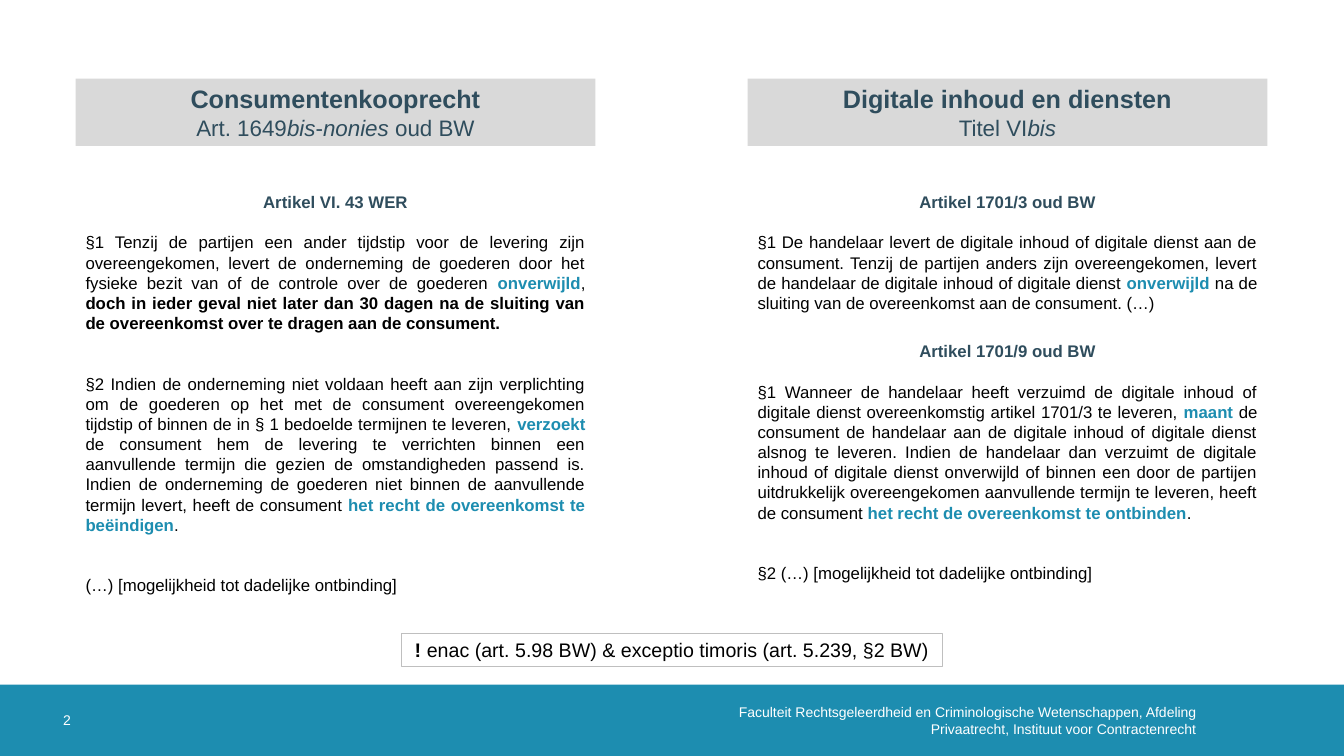
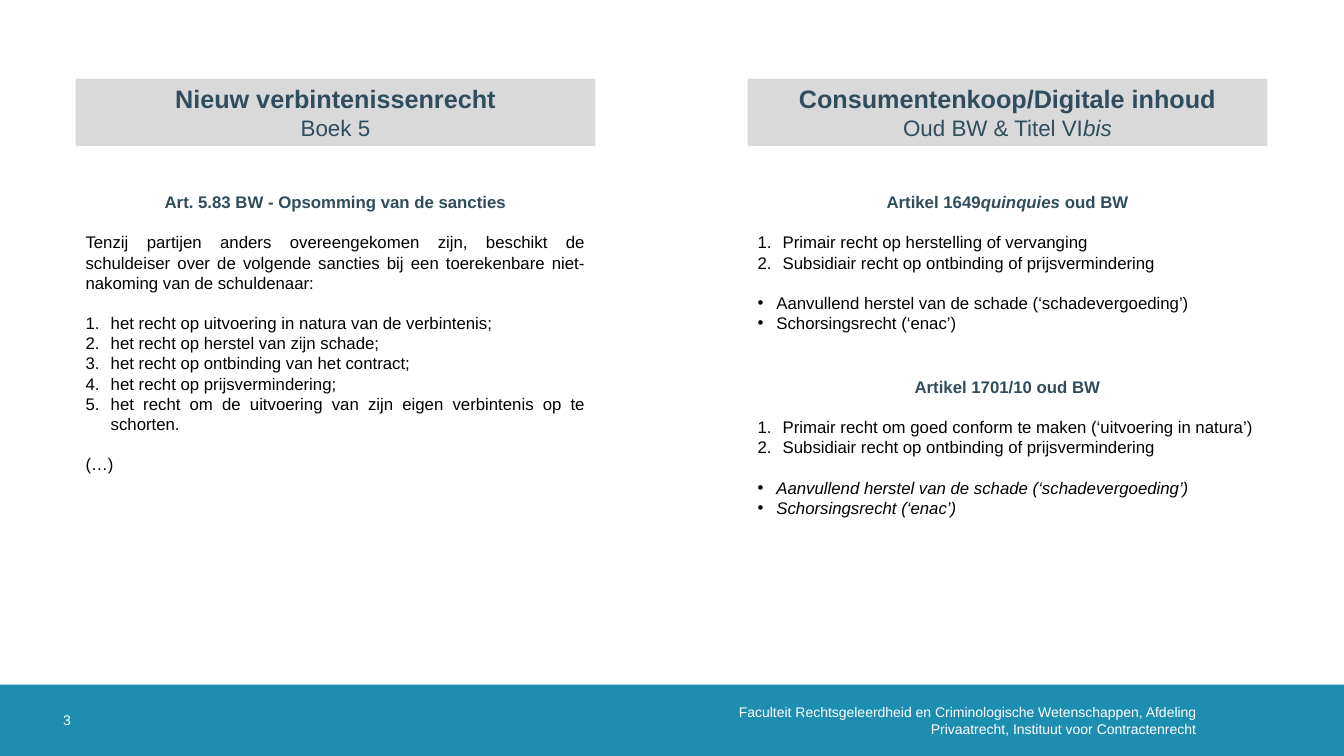
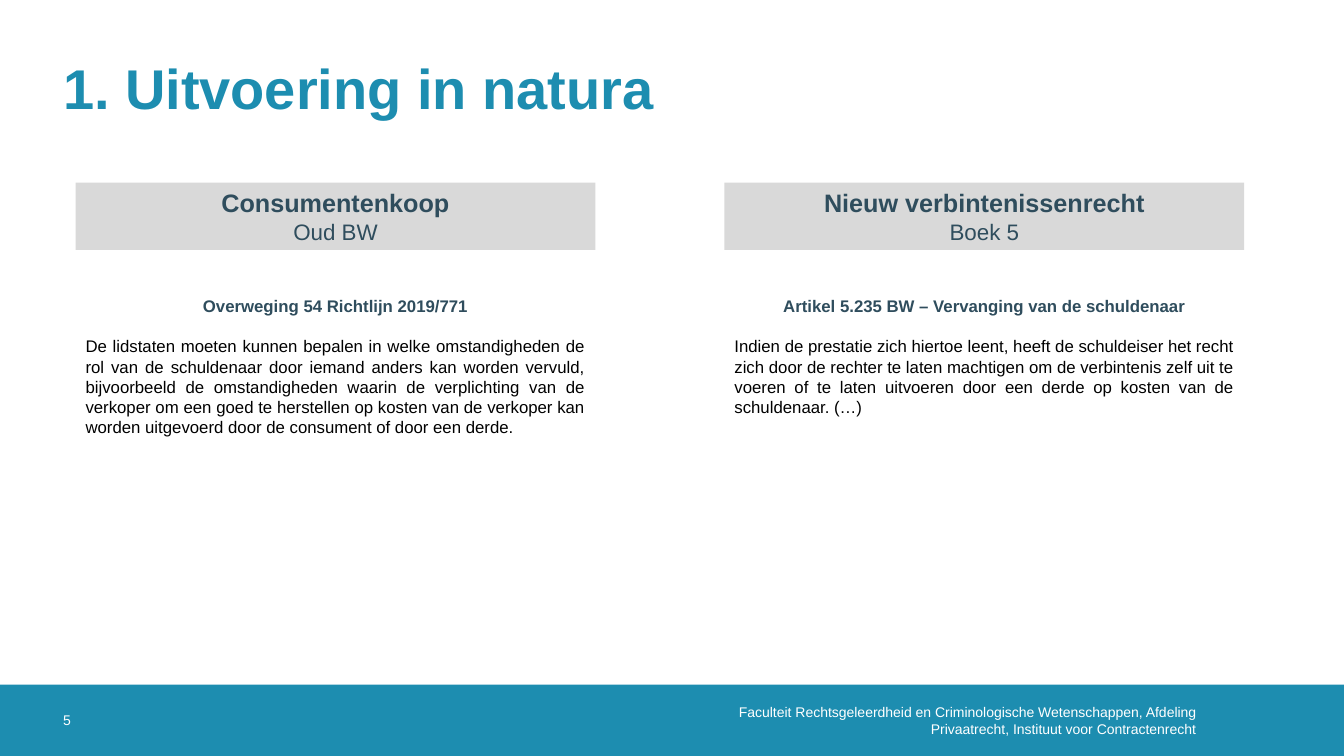
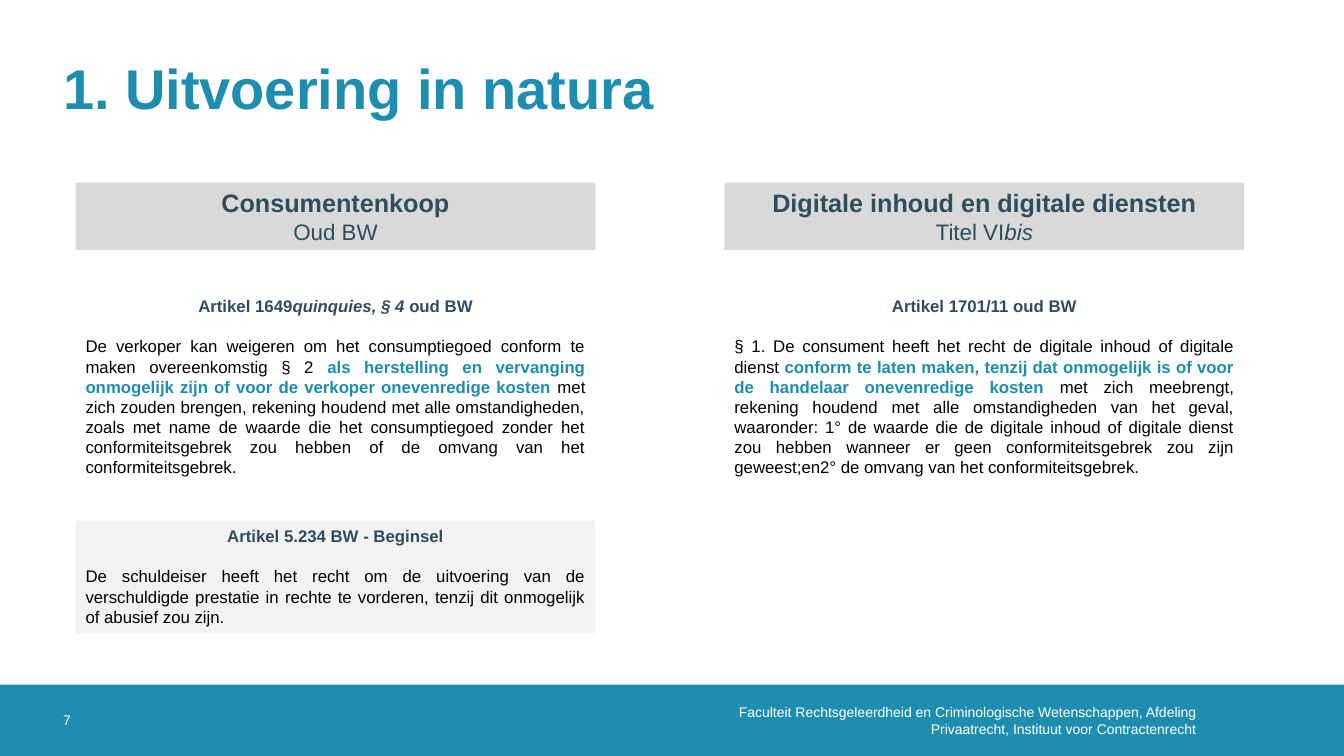
from dataclasses import dataclass

from lxml.etree import SubElement
from pptx import Presentation
from pptx.dml.color import RGBColor
from pptx.enum.shapes import MSO_SHAPE
from pptx.enum.text import MSO_ANCHOR, MSO_AUTO_SIZE, PP_ALIGN
from pptx.oxml.ns import qn
from pptx.util import Emu, Pt

EMU_PER_PX = 9525
SLIDE_WIDTH, SLIDE_HEIGHT = 1280, 720
FONT = "Arial"
TEAL, NAVY, BLACK, WHITE = "1D8DB0", "2F4D5D", "000000", "FFFFFF"
HEADER_GREY, PANEL_GREY, BORDER_GREY = "D9D9D9", "F2F2F2", "BFBFBF"
BAND_TOP, BAND_HEIGHT = 652, 68
COLUMN_WIDTH, HEADER_HEIGHT, BODY_OFFSET = 495, 64, 103
LEFT_COLUMN, RIGHT_COLUMN, TITLED_RIGHT_COLUMN = 72, 712, 690
HIGH_TOP, TITLED_TOP = 75, 174
BLANK_LINE = 14.4
FOOTER = (
    "Faculteit Rechtsgeleerdheid en Criminologische Wetenschappen, Afdeling "
    "Privaatrecht, Instituut voor Contractenrecht"
)


@dataclass
class Line:
    """One paragraph: its runs, style, bullet and blank lines before it."""

    runs: tuple
    size: int = 12
    color: str = BLACK
    bold: bool = False
    italic: bool = False
    align: PP_ALIGN = PP_ALIGN.JUSTIFY
    gap: int = 0
    bullet: str = ""


def px(length):
    """Turn px into EMU."""
    return Emu(length * EMU_PER_PX)


def rgb(value):
    """Turn a hex string into a colour."""
    return RGBColor.from_string(value)


def accent(text):
    """Return a bold teal run."""
    return text, {"bold": True, "color": TEAL}


def strong(text):
    """Return a bold run."""
    return text, {"bold": True}


def slanted(text):
    """Return an italic run."""
    return text, {"italic": True}


def heading(*runs):
    """Return the centred heading of an article."""
    return Line(runs, color=NAVY, bold=True, align=PP_ALIGN.CENTER)


def prose(*runs, gap=1):
    """Return a justified paragraph of law text."""
    return Line(runs, gap=gap)


def listing(bullet, *items, italic=False):
    """Return list items, the first one after a blank line."""
    return [
        Line((item,), bullet=bullet, italic=italic, gap=int(index == 0))
        for index, item in enumerate(items)
    ]


def add_bullet(paragraph, bullet):
    """Give a paragraph a hanging number or dot."""
    properties = paragraph._p.get_or_add_pPr()
    indent = px(24 if bullet == "1." else 18)
    properties.set("marL", str(indent))
    properties.set("indent", str(-indent))
    if bullet == "1.":
        SubElement(properties, qn("a:buAutoNum"), type="arabicPeriod")
    else:
        SubElement(properties, qn("a:buFont"), typeface=FONT)
        SubElement(properties, qn("a:buChar"), char=bullet)


def write_line(paragraph, line):
    """Fill one paragraph from a line."""
    if line.bullet:
        add_bullet(paragraph, line.bullet)
    paragraph.alignment = line.align
    if line.gap:
        paragraph.space_before = Pt(line.gap * BLANK_LINE)
    font = paragraph.font
    font.name, font.size = FONT, Pt(line.size)
    font.bold, font.italic = line.bold, line.italic
    font.color.rgb = rgb(line.color)
    for item in line.runs:
        text, changes = (item, {}) if isinstance(item, str) else item
        run = paragraph.add_run()
        run.text = text
        if "bold" in changes:
            run.font.bold = True
        if "italic" in changes:
            run.font.italic = True
        if "color" in changes:
            run.font.color.rgb = rgb(changes["color"])


def add_text(slide, box, lines, fill=None, border=None, wrap=True):
    """Add a text box that grows with its lines."""
    shape = slide.shapes.add_textbox(*map(px, box))
    frame = shape.text_frame
    frame.word_wrap = wrap
    frame.auto_size = MSO_AUTO_SIZE.SHAPE_TO_FIT_TEXT
    if fill:
        shape.fill.solid()
        shape.fill.fore_color.rgb = rgb(fill)
    if border:
        shape.line.color.rgb = rgb(border)
        shape.line.width = Pt(0.75)
    for index, line in enumerate(lines):
        write_line(frame.add_paragraph() if index else frame.paragraphs[0], line)
    return shape


def add_fixed_text(slide, box, line, right_inset=0):
    """Add a vertically centred text box of fixed size."""
    frame = add_text(slide, box, [line]).text_frame
    frame.auto_size = MSO_AUTO_SIZE.NONE
    frame.vertical_anchor = MSO_ANCHOR.MIDDLE
    frame.margin_left = frame.margin_top = frame.margin_bottom = 0
    frame.margin_right = px(right_inset)


def add_footer(slide, number):
    """Add the band with the slide number and the faculty."""
    band = slide.shapes.add_shape(
        MSO_SHAPE.RECTANGLE, 0, px(BAND_TOP), px(SLIDE_WIDTH), px(BAND_HEIGHT)
    )
    band.shadow.inherit = False
    band.fill.solid()
    band.fill.fore_color.rgb = rgb(TEAL)
    band.line.fill.background()
    for left, width, text, align, inset in (
        (634, 524, FOOTER, PP_ALIGN.RIGHT, 19),
        (60, 68, str(number), PP_ALIGN.LEFT, 0),
    ):
        line = Line((text,), size=10, color=WHITE, align=align)
        add_fixed_text(slide, (left, BAND_TOP, width, BAND_HEIGHT), line, inset)


def add_slide(presentation, number, title=None):
    """Add a slide with its footer and optional title."""
    slide = presentation.slides.add_slide(presentation.slide_layouts[6])
    add_footer(slide, number)
    if title:
        line = Line((title,), size=40, color=TEAL, bold=True, align=PP_ALIGN.LEFT)
        add_fixed_text(slide, (60, 22, 1159, 121), line)
    return slide


def add_column(slide, left, top, title, subtitle, height, lines):
    """Add a grey header with an article below it."""
    centred = {"color": NAVY, "align": PP_ALIGN.CENTER}
    header = [
        Line((title,), size=18, bold=True, **centred),
        Line(subtitle, size=16, **centred),
    ]
    add_text(slide, (left, top, COLUMN_WIDTH, HEADER_HEIGHT), header, HEADER_GREY)
    add_text(slide, (left, top + BODY_OFFSET, COLUMN_WIDTH, height), lines)


def build_delivery(presentation):
    """Build the comparison of delivery rules."""
    slide = add_slide(presentation, 2)
    add_column(
        slide, LEFT_COLUMN, HIGH_TOP, "Consumentenkooprecht",
        ("Art. 1649", slanted("bis"), "-", slanted("nonies "), "oud BW"), 397,
        [
            heading("Artikel VI. 43 WER"),
            prose(
                "§1 Tenzij de partijen een ander tijdstip voor de levering zijn "
                "overeengekomen, levert de onderneming de goederen door het fysieke "
                "bezit van of de controle over de goederen ",
                accent("onverwijld"), ", ",
                strong("doch in ieder geval niet later dan 30 dagen na de sluiting van "
                       "de overeenkomst over te dragen aan de consument."),
            ),
            prose(
                "§2 Indien de onderneming niet voldaan heeft aan zijn verplichting om de "
                "goederen op het met de consument overeengekomen tijdstip of binnen de "
                "in § 1 bedoelde termijnen te leveren, ",
                accent("verzoekt "),
                "de consument hem de levering te verrichten binnen een aanvullende "
                "termijn die gezien de omstandigheden passend is. Indien de onderneming "
                "de goederen niet binnen de aanvullende termijn levert, heeft de "
                "consument ",
                accent("het recht de overeenkomst te beëindigen"), ".", gap=2,
            ),
            prose("(…) [mogelijkheid tot dadelijke ontbinding]", gap=2),
        ],
    )
    add_column(
        slide, RIGHT_COLUMN, HIGH_TOP, "Digitale inhoud en diensten",
        ("Titel VI", slanted("bis")), 126,
        [
            heading("Artikel 1701/3 oud BW"),
            prose(
                "§1 De handelaar levert de digitale inhoud of digitale dienst aan de "
                "consument. Tenzij de partijen anders zijn overeengekomen, levert de "
                "handelaar de digitale inhoud of digitale dienst ",
                accent("onverwijld"),
                " na de sluiting van de overeenkomst aan de consument. (…)",
            ),
        ],
    )
    add_text(
        slide, (RIGHT_COLUMN, 320, COLUMN_WIDTH, 242),
        [
            heading("Artikel 1701/9 oud BW"),
            prose(
                "§1 Wanneer de handelaar heeft verzuimd de digitale inhoud of digitale "
                "dienst overeenkomstig artikel 1701/3 te leveren, ",
                accent("maant "),
                "de consument de handelaar aan de digitale inhoud of digitale dienst "
                "alsnog te leveren. Indien de handelaar dan verzuimt de digitale inhoud "
                "of digitale dienst onverwijld of binnen een door de partijen "
                "uitdrukkelijk overeengekomen aanvullende termijn te leveren, heeft de "
                "consument ",
                accent("het recht de overeenkomst te ontbinden"), ".",
            ),
            prose("§2 (…) [mogelijkheid tot dadelijke ontbinding]", gap=2),
        ],
    )
    note = Line(
        (strong("! "), "enac (art. 5.98 BW) & exceptio timoris (art. 5.239, §2 BW)"),
        size=14, align=PP_ALIGN.CENTER,
    )
    add_text(slide, (382, 603, 516, 32), [note], border=BORDER_GREY, wrap=False)


def build_sanctions(presentation):
    """Build the comparison of sanctions."""
    slide = add_slide(presentation, 3)
    reduction = "Subsidiair recht op ontbinding of prijsvermindering"
    extras = (
        "Aanvullend herstel van de schade (‘schadevergoeding’)",
        "Schorsingsrecht (‘enac’)",
    )
    add_column(
        slide, LEFT_COLUMN, HIGH_TOP, "Nieuw verbintenissenrecht", ("Boek 5",), 281,
        [
            heading("Art. 5.83 BW - Opsomming van de sancties"),
            prose(
                "Tenzij partijen anders overeengekomen zijn, beschikt de schuldeiser "
                "over de volgende sancties bij een toerekenbare niet-nakoming van de "
                "schuldenaar:"
            ),
            *listing(
                "1.",
                "het recht op uitvoering in natura van de verbintenis;",
                "het recht op herstel van zijn schade;",
                "het recht op ontbinding van het contract;",
                "het recht op prijsvermindering;",
                "het recht om de uitvoering van zijn eigen verbintenis op te schorten.",
            ),
            prose("(…)"),
        ],
    )
    add_column(
        slide, RIGHT_COLUMN, HIGH_TOP, "Consumentenkoop/Digitale inhoud",
        ("Oud BW & Titel VI", slanted("bis")), 145,
        [
            heading("Artikel 1649", slanted("quinquies "), "oud BW"),
            *listing("1.", "Primair recht op herstelling of vervanging", reduction),
            *listing("•", *extras),
        ],
    )
    add_text(
        slide, (RIGHT_COLUMN, 354, COLUMN_WIDTH, 145),
        [
            heading("Artikel 1701/10 oud BW"),
            *listing(
                "1.",
                "Primair recht om goed conform te maken (‘uitvoering in natura’)",
                reduction,
            ),
            *listing("•", *extras, italic=True),
        ],
    )


def build_replacement(presentation):
    """Build the comparison of performance by a third party."""
    slide = add_slide(presentation, 5, "1. Uitvoering in natura")
    add_column(
        slide, LEFT_COLUMN, TITLED_TOP, "Consumentenkoop", ("Oud BW",), 145,
        [
            heading("Overweging 54 Richtlijn 2019/771"),
            prose(
                "De lidstaten moeten kunnen bepalen in welke omstandigheden de rol van "
                "de schuldenaar door iemand anders kan worden vervuld, bijvoorbeeld de "
                "omstandigheden waarin de verplichting van de verkoper om een goed te "
                "herstellen op kosten van de verkoper kan worden uitgevoerd door de "
                "consument of door een derde."
            ),
        ],
    )
    add_column(
        slide, TITLED_RIGHT_COLUMN, TITLED_TOP, "Nieuw verbintenissenrecht",
        ("Boek 5",), 126,
        [
            heading("Artikel 5.235 BW – Vervanging van de schuldenaar"),
            prose(
                "Indien de prestatie zich hiertoe leent, heeft de schuldeiser het recht "
                "zich door de rechter te laten machtigen om de verbintenis zelf uit te "
                "voeren of te laten uitvoeren door een derde op kosten van de "
                "schuldenaar. (…)"
            ),
        ],
    )


def build_refusal(presentation):
    """Build the comparison of grounds for refusal."""
    slide = add_slide(presentation, 7, "1. Uitvoering in natura")
    add_column(
        slide, LEFT_COLUMN, TITLED_TOP, "Consumentenkoop", ("Oud BW",), 184,
        [
            heading("Artikel 1649", slanted("quinquies, § 4 "), "oud BW"),
            prose(
                "De verkoper kan weigeren om het consumptiegoed conform te maken "
                "overeenkomstig § 2 ",
                accent("als herstelling en vervanging onmogelijk zijn of voor de "
                       "verkoper onevenredige kosten "),
                "met zich zouden brengen, rekening houdend met alle omstandigheden, "
                "zoals met name de waarde die het consumptiegoed zonder het "
                "conformiteitsgebrek zou hebben of de omvang van het "
                "conformiteitsgebrek.",
            ),
        ],
    )
    add_column(
        slide, TITLED_RIGHT_COLUMN, TITLED_TOP, "Digitale inhoud en digitale diensten",
        ("Titel VI", slanted("bis")), 184,
        [
            heading("Artikel 1701/11 oud BW"),
            prose(
                "§ 1. De consument heeft het recht de digitale inhoud of digitale "
                "dienst ",
                accent("conform te laten maken, tenzij dat onmogelijk is of voor de "
                       "handelaar onevenredige kosten "),
                "met zich meebrengt, rekening houdend met alle omstandigheden van het "
                "geval, waaronder: 1° de waarde die de digitale inhoud of digitale "
                "dienst zou hebben wanneer er geen conformiteitsgebrek zou zijn "
                "geweest;en2° de omvang van het conformiteitsgebrek.",
            ),
        ],
    )
    add_text(
        slide, (LEFT_COLUMN, 496, COLUMN_WIDTH, 107),
        [
            heading("Artikel 5.234 BW - Beginsel"),
            prose(
                "De schuldeiser heeft het recht om de uitvoering van de verschuldigde "
                "prestatie in rechte te vorderen, tenzij dit onmogelijk of abusief zou "
                "zijn."
            ),
        ],
        PANEL_GREY,
    )


def main():
    """Build and save the presentation."""
    presentation = Presentation()
    presentation.slide_width = px(SLIDE_WIDTH)
    presentation.slide_height = px(SLIDE_HEIGHT)
    for build in (build_delivery, build_sanctions, build_replacement, build_refusal):
        build(presentation)
    presentation.save("out.pptx")


if __name__ == "__main__":
    main()
